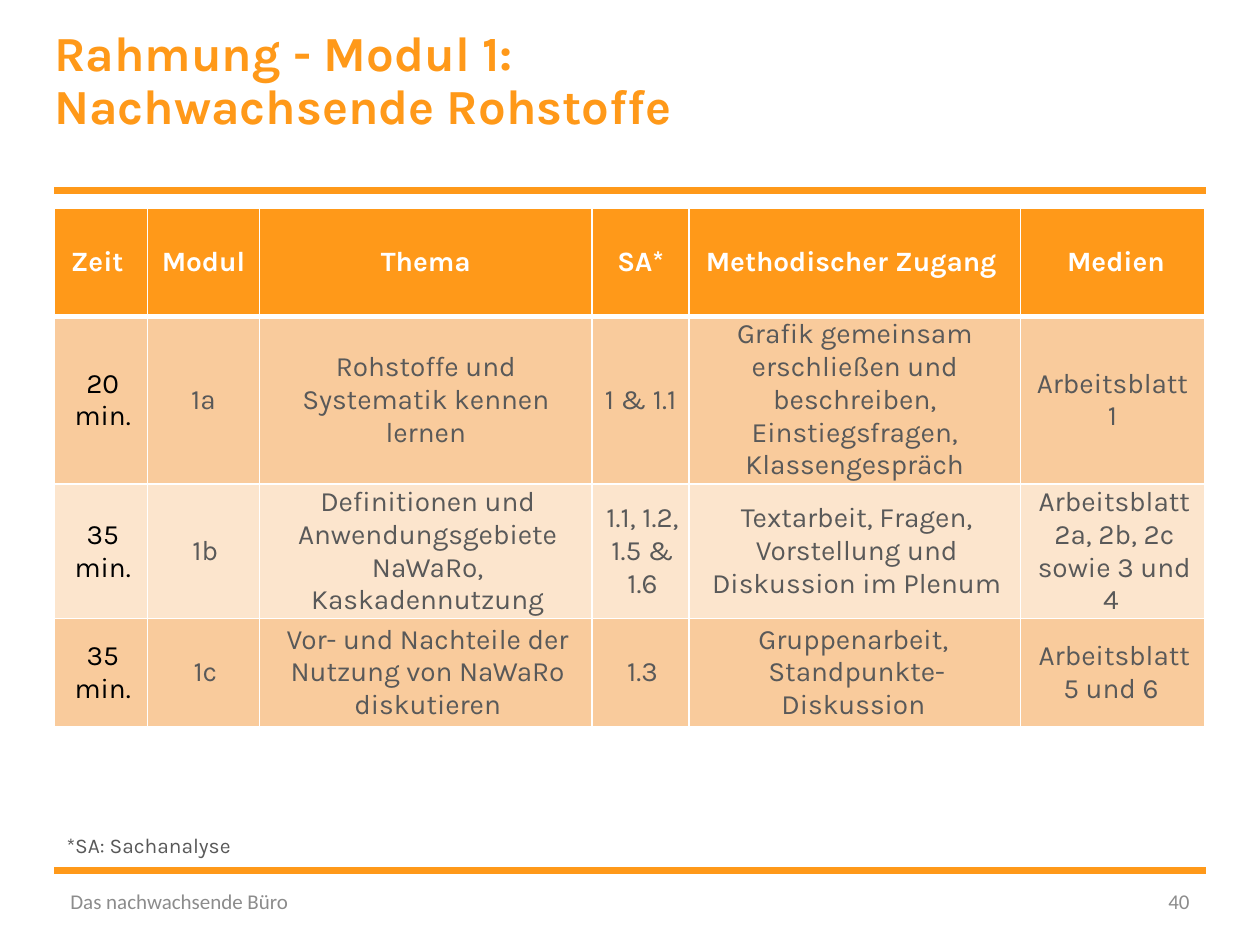
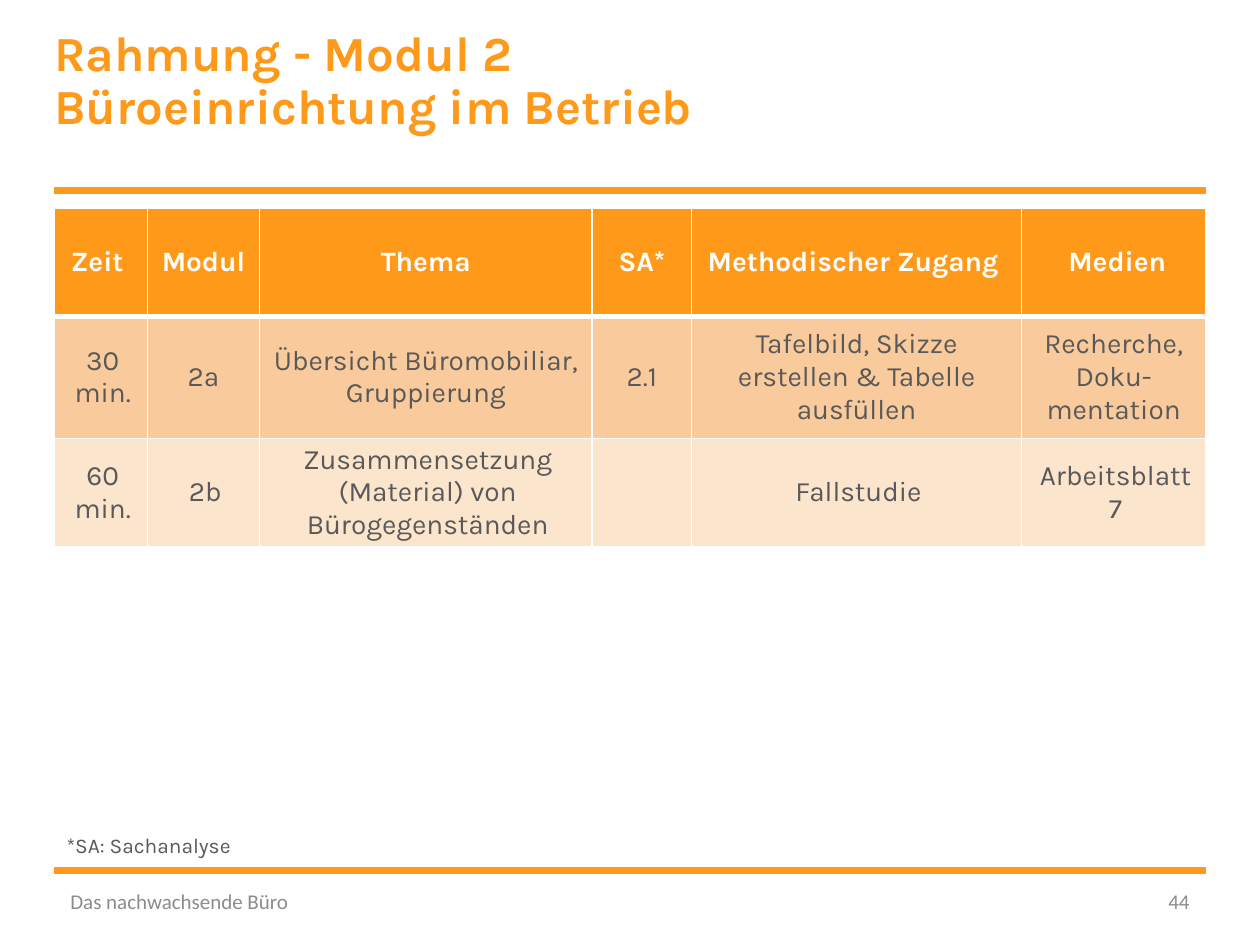
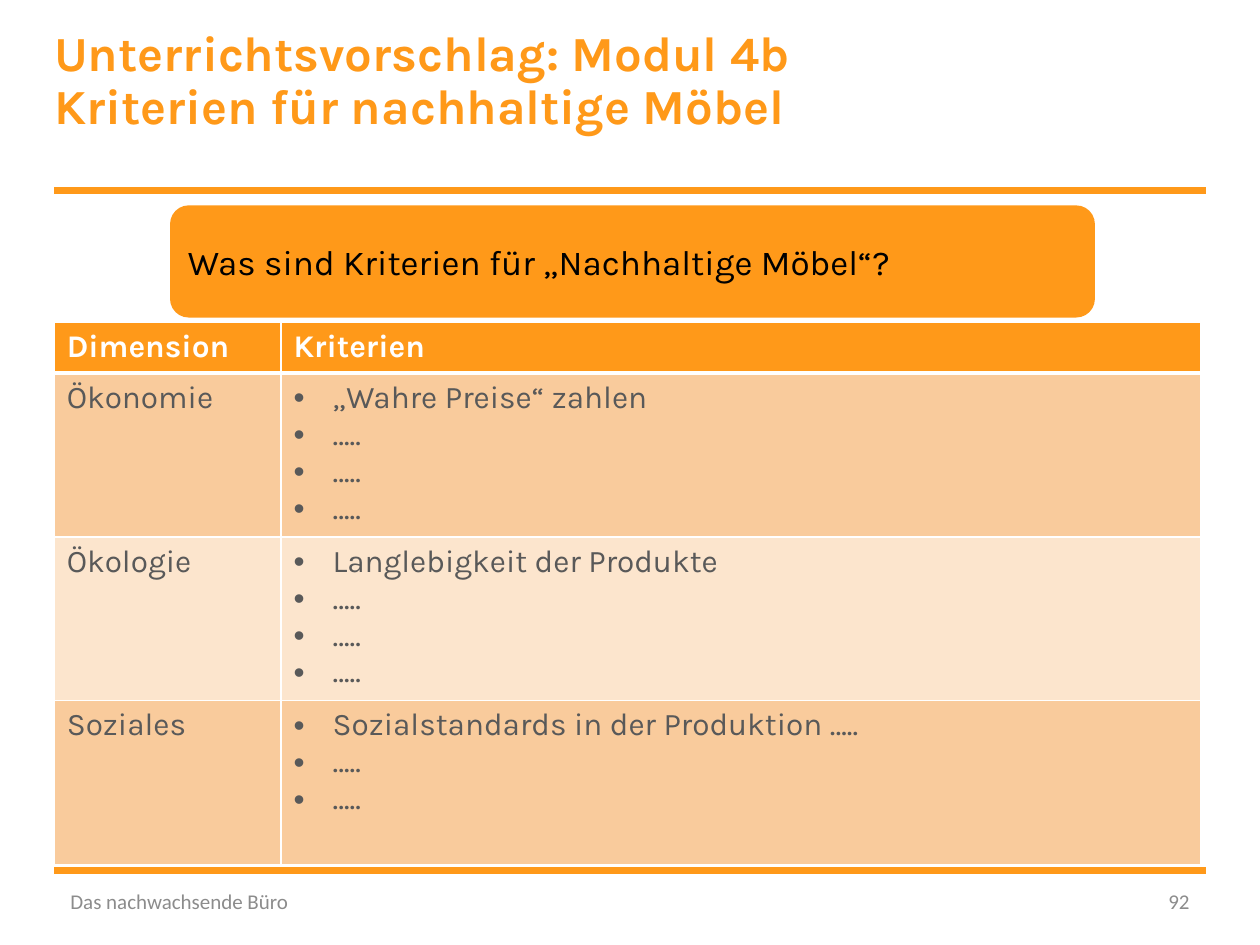
"""Build three teaching slides with framing tables on office furniture."""
import dataclasses

import lxml.etree
import pptx
import pptx.dml.color
import pptx.enum.shapes
import pptx.enum.text
import pptx.oxml.ns
import pptx.util

Inches = pptx.util.Inches
Pt = pptx.util.Pt
qn = pptx.oxml.ns.qn
ALIGN = pptx.enum.text.PP_ALIGN
ANCHOR = pptx.enum.text.MSO_ANCHOR


@dataclasses.dataclass(frozen=True)
class Theme:
    """Colours, fonts and type sizes of the deck."""
    accent: str = "FF9919"
    band: str = "F9CB9C"
    band_light: str = "FCE5CD"
    white: str = "FFFFFF"
    black: str = "000000"
    text: str = "595959"
    muted: str = "8C8C8C"
    font: str = "Karla"
    footer_font: str = "Calibri"
    title_size: int = 28
    question_size: int = 20
    criteria_size: int = 18
    plan_size: int = 16
    small_size: int = 12
    rule_width: int = 4


@dataclasses.dataclass(frozen=True)
class Box:
    """A region in inches."""
    x: float
    y: float
    w: float
    h: float

    def lengths(self):
        """Return left, top, width and height as lengths."""
        return [Inches(v) for v in (self.x, self.y, self.w, self.h)]


@dataclasses.dataclass(frozen=True)
class Style:
    """How a text is set."""
    size: int
    color: str
    bold: bool = False
    font: str = Theme.font
    align: ALIGN = ALIGN.LEFT
    spacing: float = None
    indent: float = 0
    bullet: bool = False


THEME = Theme()
FRAME = Box(0.43, 1.51, 9.14, 5.4)
TITLE = Box(0.43, 0.23, 6.69, 1.17)
FOOTER = Box(0.46, 6.95, 9.08, 0.4)
NOTE = Box(0.43, 6.56, 2.75, 0.3)
QUESTION = Box(1.35, 1.63, 7.34, 0.89)
PLAN_HEAD = ["Zeit ", "Modul", "Thema", "SA*", "Methodischer Zugang ", " Medien"]
DOTS = "….."


def rgb(color):
    """Turn a hex string into a colour."""
    return pptx.dml.color.RGBColor.from_string(color)


def sub(parent, tag, **attrs):
    """Append a DrawingML element."""
    return lxml.etree.SubElement(parent, qn(tag), {k: str(v) for k, v in attrs.items()})


def write(tf, text, style):
    """Write one paragraph per line of the text; a vertical bar breaks a line."""
    for i, line in enumerate(text.split("\n")):
        p = tf.paragraphs[0] if i == 0 else tf.add_paragraph()
        p.alignment = style.align
        if style.spacing:
            p.line_spacing = style.spacing
        pPr = p._p.get_or_add_pPr()
        if style.indent:
            pPr.set("marL", str(Inches(style.indent)))
        if style.bullet:
            pPr.set("indent", str(-Inches(style.indent)))
            sub(pPr, "a:buFont", typeface="Arial")
            sub(pPr, "a:buChar", char="•")
        for j, part in enumerate(line.split("|")):
            if j:
                p.add_line_break()
            r = p.add_run()
            r.text = part
            r.font.size = Pt(style.size)
            r.font.name = style.font
            r.font.bold = style.bold
            r.font.color.rgb = rgb(style.color)


def add_text(s, box, text, style, anchor=ANCHOR.TOP, inset=None):
    """Add a wrapped text box."""
    tf = s.shapes.add_textbox(*box.lengths()).text_frame
    tf.word_wrap = True
    tf.vertical_anchor = anchor
    if inset is not None:
        tf.margin_left = tf.margin_right = tf.margin_top = tf.margin_bottom = Inches(inset)
    write(tf, text, style)
    return tf


def add_rules(s, box):
    """Draw the rules along the top and bottom of the box."""
    for y in (box.y, box.y + box.h):
        sp = s.shapes.add_connector(pptx.enum.shapes.MSO_CONNECTOR.STRAIGHT, Inches(box.x),
                                    Inches(y), Inches(box.x + box.w), Inches(y))
        sp.line.color.rgb = rgb(THEME.accent)
        sp.line.width = Pt(THEME.rule_width)
        sub(sp._element.spPr, "a:effectLst")


def add_footer(s, box, number):
    """Place the deck name on the left and the page number on the right."""
    style = Style(THEME.small_size, THEME.muted, font=THEME.footer_font)
    add_text(s, Box(box.x, box.y, 3.38, box.h), "Das nachwachsende Büro", style, ANCHOR.MIDDLE)
    width = 0.61
    add_text(s, Box(box.x + box.w - width, box.y, width, box.h), str(number),
             dataclasses.replace(style, align=ALIGN.RIGHT), ANCHOR.MIDDLE)


def add_base(prs, title, number):
    """Add a slide with the shared rules, title and footer."""
    s = prs.slides.add_slide(prs.slide_layouts[6])
    add_rules(s, FRAME)
    add_text(s, TITLE, title, Style(THEME.title_size, THEME.accent, bold=True, spacing=0.9), inset=0)
    add_footer(s, FOOTER, number)
    return s


def set_borders(cell, row):
    """Give a cell white borders, with a heavy one under the header."""
    tcPr = cell._tc.get_or_add_tcPr()
    widths = {"L": 1, "R": 1, "T": 3 if row == 1 else 1, "B": 3 if row == 0 else 1}
    for i, (side, width) in enumerate(widths.items()):
        ln = sub(tcPr, f"a:ln{side}", w=Pt(width))
        sub(sub(ln, "a:solidFill"), "a:srgbClr", val=THEME.white)
        tcPr.insert(i, ln)


def add_grid(s, box, cols, heights, rows, style_of, compact=False):
    """Add a banded table whose text styles come from style_of(row, col)."""
    sp = s.shapes.add_table(len(rows), len(cols), *box.lengths())
    for col, width in zip(sp.table.columns, cols):
        col.width = Inches(width)
    for row, height in zip(sp.table.rows, heights):
        row.height = Inches(height)
    sp.height = Inches(box.h)
    for r, row in enumerate(rows):
        fill = THEME.accent if r == 0 else (THEME.band_light, THEME.band)[r % 2]
        for c, text in enumerate(row):
            cell = sp.table.cell(r, c)
            cell.fill.solid()
            cell.fill.fore_color.rgb = rgb(fill)
            set_borders(cell, r)
            if compact:
                cell.vertical_anchor = ANCHOR.MIDDLE
                cell.margin_left = cell.margin_right = Inches(0.07)
                cell.margin_top = cell.margin_bottom = 0
            if text:
                write(cell.text_frame, text, style_of(r, c))


def add_plan_slide(prs, title, number, box, cols, heights, rows, time_color):
    """Add a lesson plan slide with its table and note."""
    def style_of(r, c):
        """Choose the style of a plan cell."""
        if r == 0:
            return Style(THEME.plan_size, THEME.white, bold=True, align=ALIGN.CENTER)
        return Style(THEME.plan_size, time_color if c == 0 else THEME.text, align=ALIGN.CENTER,
                     indent=0.03 if r > 1 or c == 0 else 0)

    s = add_base(prs, title, number)
    add_grid(s, box, cols, heights, [PLAN_HEAD] + rows, style_of, compact=True)
    tf = add_text(s, NOTE, "*SA: Sachanalyse", Style(THEME.small_size, THEME.text))
    tf.auto_size = pptx.enum.text.MSO_AUTO_SIZE.SHAPE_TO_FIT_TEXT


def add_question(s, box, text):
    """Add the rounded box with the guiding question."""
    sp = s.shapes.add_shape(pptx.enum.shapes.MSO_SHAPE.ROUNDED_RECTANGLE, *box.lengths())
    sp.shadow.inherit = False
    sp.fill.solid()
    sp.fill.fore_color.rgb = rgb(THEME.accent)
    sp.line.fill.background()
    sp.text_frame.word_wrap = True
    sp.text_frame.vertical_anchor = ANCHOR.MIDDLE
    write(sp.text_frame, text, Style(THEME.question_size, THEME.black))


def add_criteria_slide(prs, title, number, question, box, rows):
    """Add the slide that collects criteria by dimension."""
    def style_of(r, c):
        """Choose the style of a criteria cell."""
        if r == 0:
            return Style(THEME.criteria_size, THEME.white, bold=True)
        listed = c == 1
        return Style(THEME.criteria_size, THEME.text, indent=0.31 if listed else 0, bullet=listed)

    s = add_base(prs, title, number)
    cells = [["Dimension", "Kriterien"]]
    cells += [[name, "\n".join([first] + [DOTS] * blanks)] for name, first, blanks in rows]
    add_grid(s, box, [1.8, box.w - 1.8], [0.4] + [1.3] * len(rows), cells, style_of)
    add_question(s, QUESTION, question)


def main():
    """Build and save the deck."""
    prs = pptx.Presentation()
    prs.slide_width, prs.slide_height = Inches(10), Inches(7.5)
    add_plan_slide(
        prs, "Rahmung - Modul 1: |Nachwachsende Rohstoffe", 40, Box(0.43, 1.65, 9.14, 4.13),
        [0.74, 0.89, 2.64, 0.77, 2.63, 1.46], [0.86, 0.68, 0.86, 0.86],
        [["20 min.", "1a", "Rohstoffe und Systematik kennen lernen", "1 & 1.1",
          "Grafik gemeinsam erschließen und beschreiben, Einstiegsfragen, Klassengespräch",
          "Arbeitsblatt 1"],
         ["35 min.", "1b", "Definitionen und Anwendungsgebiete NaWaRo,\nKaskadennutzung",
          "1.1, 1.2, 1.5 & 1.6", "Textarbeit, Fragen, Vorstellung und Diskussion im Plenum",
          "Arbeitsblatt 2a, 2b, 2c sowie 3 und 4 "],
         ["35 min.", "1c", "Vor- und Nachteile der Nutzung von NaWaRo diskutieren", "1.3",
          "Gruppenarbeit, \nStandpunkte-Diskussion ", "Arbeitsblatt 5 und 6 "]],
        THEME.black)
    add_plan_slide(
        prs, "Rahmung - Modul 2|Büroeinrichtung im Betrieb", 44, Box(0.43, 1.65, 9.14, 2.7),
        [0.74, 0.89, 2.64, 0.79, 2.62, 1.46], [0.86, 0.97, 0.86],
        [["30 min.", "2a", "Übersicht Büromobiliar, Gruppierung", "2.1",
          "Tafelbild, Skizze erstellen & Tabelle ausfüllen", "Recherche, Doku-mentation"],
         ["60 min.", "2b", "Zusammensetzung (Material) von Bürogegenständen", "",
          "Fallstudie", "Arbeitsblatt 7"]],
        THEME.text)
    add_criteria_slide(
        prs, "Unterrichtsvorschlag: Modul 4b|Kriterien für nachhaltige Möbel", 92,
        "Was sind Kriterien für „Nachhaltige Möbel“?", Box(0.43, 2.56, 9.1, 4.3),
        [("Ökonomie", "„Wahre Preise“ zahlen", 3),
         ("Ökologie", "Langlebigkeit der Produkte", 3),
         ("Soziales", f"Sozialstandards in der Produktion {DOTS}", 2)])
    prs.save("out.pptx")


if __name__ == "__main__":
    main()
